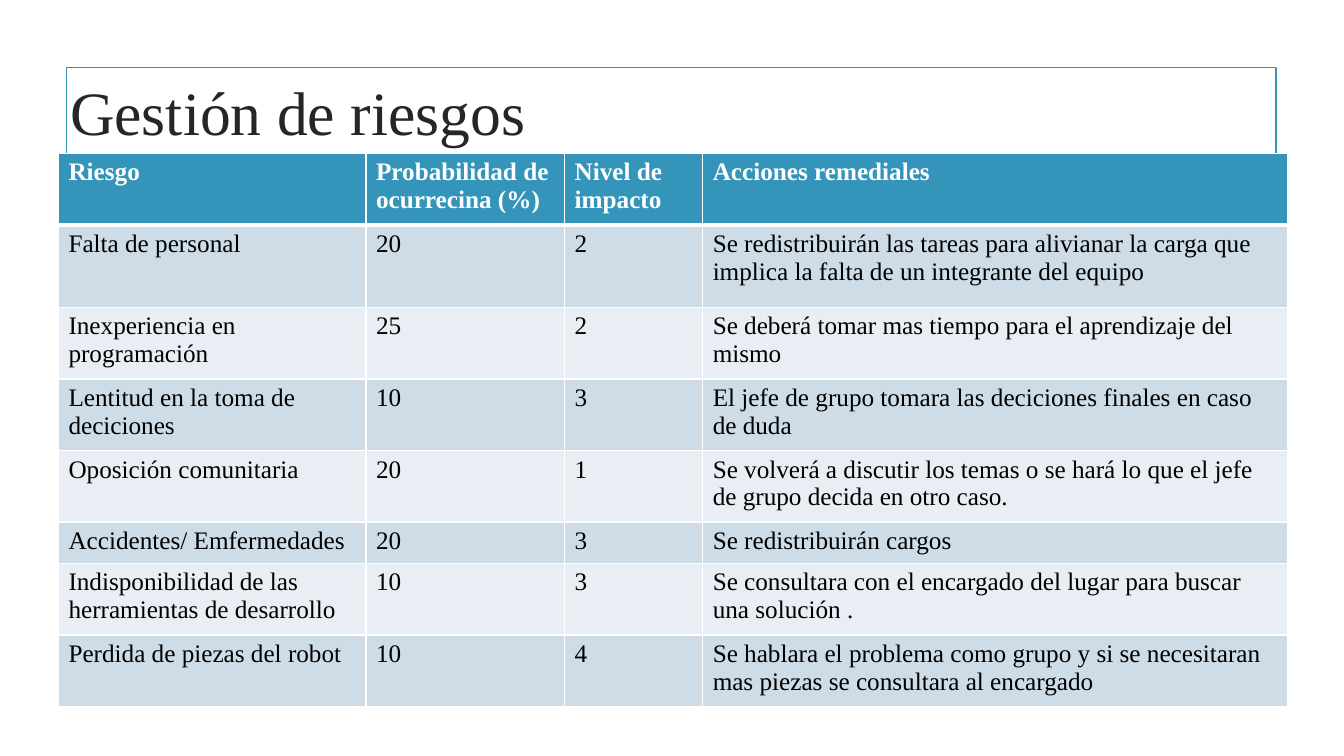
from dataclasses import dataclass

import lxml.etree
import pptx
import pptx.dml.color
import pptx.enum.shapes
import pptx.enum.text
import pptx.oxml.ns
import pptx.util

Inches = pptx.util.Inches
Pt = pptx.util.Pt


@dataclass(frozen=True)
class Theme:
    font: str = "Times New Roman"
    accent: str = "3494BA"
    title_color: str = "262626"
    body_color: str = "000000"
    white: str = "FFFFFF"
    bands: tuple = ("CEDCE7", "E8EEF3")
    title_size: int = 44
    table_size: int = 18
    frame_width: float = 1.25
    border_width: int = 1
    header_rule_width: int = 3


COLUMN_WIDTHS = (3.05, 1.97, 1.37, 5.8)
ROW_HEIGHTS = (0.71, 0.82, 0.71, 0.71, 0.71, 0.41, 0.71, 0.71)
RISKS = (
    ("Riesgo", "Probabilidad de ocurrecina (%)", "Nivel de impacto", "Acciones remediales"),
    ("Falta de personal", "20", "2",
     "Se redistribuirán las tareas para alivianar la carga que implica la falta de un integrante del equipo"),
    ("Inexperiencia en programación", "25", "2",
     "Se deberá tomar mas tiempo para el aprendizaje del mismo"),
    ("Lentitud en la toma de deciciones", "10", "3",
     "El jefe de grupo tomara las deciciones finales en caso de duda"),
    ("Oposición comunitaria", "20", "1",
     "Se volverá a discutir los temas o se hará lo que el jefe de grupo decida en otro caso."),
    ("Accidentes/ Emfermedades", "20", "3", "Se redistribuirán cargos"),
    ("Indisponibilidad de las herramientas de desarrollo", "10", "3",
     "Se consultara con el encargado del lugar para buscar una solución ."),
    ("Perdida de piezas del robot", "10", "4",
     "Se hablara el problema como grupo y si se necesitaran mas piezas se consultara al encargado"),
)


def rgb(color):
    return pptx.dml.color.RGBColor.from_string(color)


class SlideBuilder:
    def __init__(self, slide, theme):
        self.slide = slide
        self.theme = theme

    def add_run(self, paragraph, text, size, color, bold=False):
        run = paragraph.add_run()
        run.text = text
        run.font.name = self.theme.font
        run.font.size = Pt(size)
        run.font.bold = bold
        run.font.color.rgb = rgb(color)

    def add_frame(self, left, top, width, height):
        frame = self.slide.shapes.add_shape(
            pptx.enum.shapes.MSO_SHAPE.RECTANGLE,
            Inches(left), Inches(top), Inches(width), Inches(height))
        frame.shadow.inherit = False
        frame.fill.background()
        frame.line.color.rgb = rgb(self.theme.accent)
        frame.line.width = Pt(self.theme.frame_width)

    def add_title(self, text, left, top, width, height):
        title = self.slide.shapes.add_textbox(
            Inches(left), Inches(top), Inches(width), Inches(height))
        title.text_frame.word_wrap = True
        title.text_frame.vertical_anchor = pptx.enum.text.MSO_ANCHOR.MIDDLE
        paragraph = title.text_frame.paragraphs[0]
        paragraph.alignment = pptx.enum.text.PP_ALIGN.CENTER
        self.add_run(paragraph, text, self.theme.title_size, self.theme.title_color)

    def set_borders(self, cell, row_index):
        """Draw white cell edges, heavier where the header meets the body."""
        qualify = pptx.oxml.ns.qn
        properties = cell._tc.get_or_add_tcPr()
        heavy_edge = {0: "lnB", 1: "lnT"}.get(row_index)
        for edge in ("lnL", "lnR", "lnT", "lnB"):
            width = self.theme.header_rule_width if edge == heavy_edge else self.theme.border_width
            line = lxml.etree.SubElement(properties, qualify(f"a:{edge}"), w=str(Pt(width)))
            fill = lxml.etree.SubElement(line, qualify("a:solidFill"))
            lxml.etree.SubElement(fill, qualify("a:srgbClr"), val=self.theme.white)

    def add_table(self, rows, left, top, column_widths, row_heights):
        table = self.slide.shapes.add_table(
            len(rows), len(column_widths), Inches(left), Inches(top),
            Inches(sum(column_widths)), Inches(sum(row_heights))).table
        table.horz_banding = False
        for column, width in zip(table.columns, column_widths):
            column.width = Inches(width)
        for row_index, (row, height, texts) in enumerate(zip(table.rows, row_heights, rows)):
            row.height = Inches(height)
            is_header = row_index == 0
            fill = self.theme.accent if is_header else self.theme.bands[(row_index - 1) % 2]
            color = self.theme.white if is_header else self.theme.body_color
            for cell, text in zip(row.cells, texts):
                self.set_borders(cell, row_index)
                cell.fill.solid()
                cell.fill.fore_color.rgb = rgb(fill)
                self.add_run(cell.text_frame.paragraphs[0], text,
                             self.theme.table_size, color, bold=is_header)


def main():
    presentation = pptx.Presentation()
    presentation.slide_width = Inches(13.33)
    presentation.slide_height = Inches(7.5)
    slide = presentation.slides.add_slide(presentation.slide_layouts[6])
    builder = SlideBuilder(slide, Theme())
    builder.add_frame(0.66, 0.67, 12, 6.17)
    builder.add_title("Gestión de riesgos", 0.45, 0.68, 5.01, 0.84)
    builder.add_table(RISKS, 0.58, 1.52, COLUMN_WIDTHS, ROW_HEIGHTS)
    presentation.save("out.pptx")


if __name__ == "__main__":
    main()
